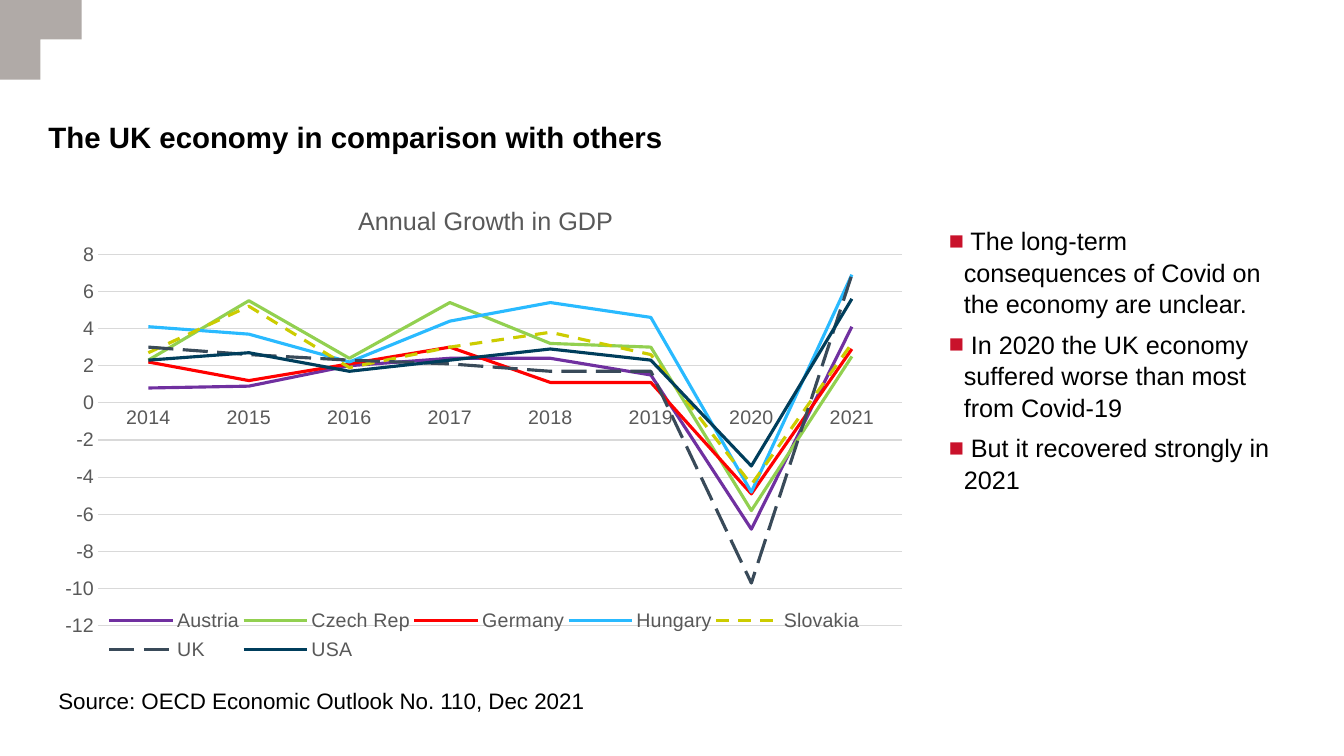
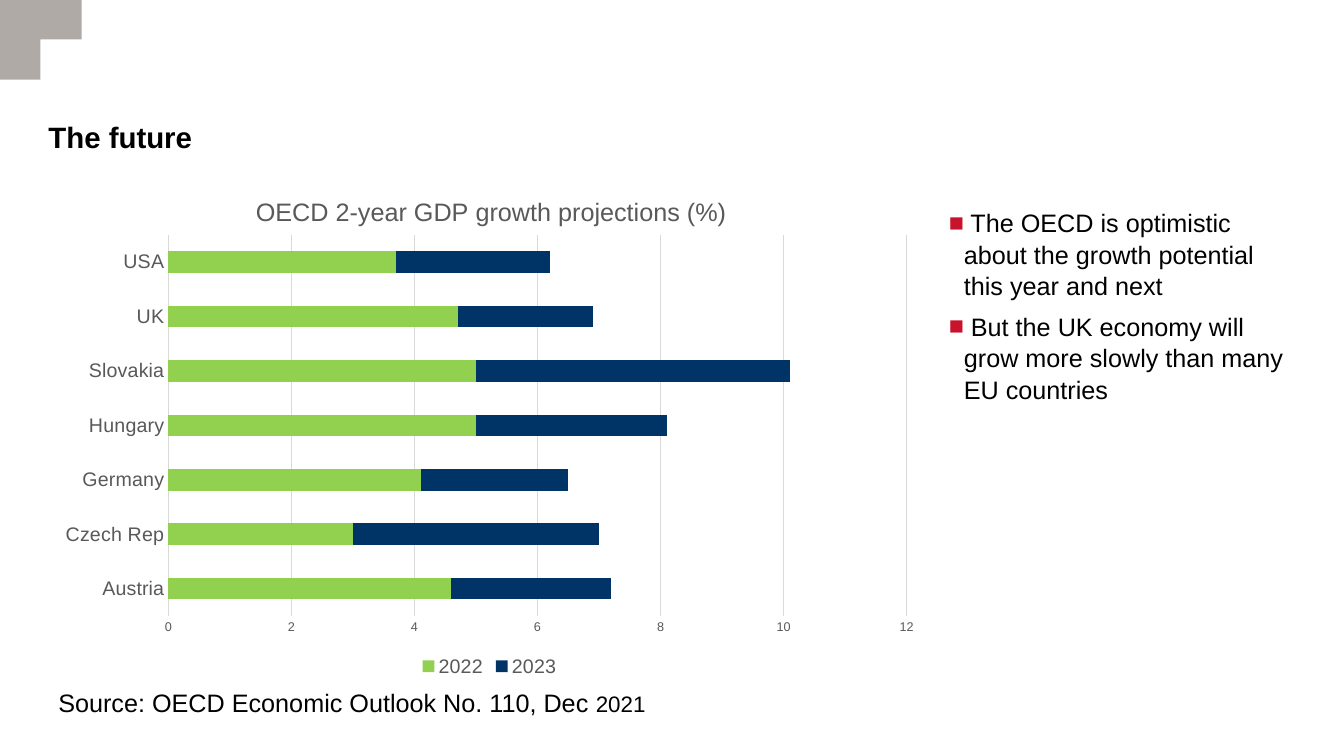
from lxml import etree
from pptx import Presentation
from pptx.chart.data import CategoryChartData
from pptx.dml.color import RGBColor
from pptx.enum import chart as ch, dml, text
from pptx.oxml import parse_xml
from pptx.oxml.ns import nsdecls, qn
from pptx.util import Pt

PX = 9144  # EMU per px, 100 px to the inch
FONT = "Arial"
COLORS = {
    "black": "000000", "band": "B0AAA7", "bullet": "C9122B",
    "label": "595959", "grid": "D9D9D9",
    "purple": "7030A0", "green": "92D050", "red": "FF0000", "sky": "29BAFF",
    "olive": "CCCC00", "slate": "394A59", "teal": "003E5C", "navy": "003366",
}
CORNER = [(0, 0), (81, 0), (81, 39), (40, 39), (40, 79), (0, 79)]
TITLE_BOX = (48, 118, 1237, 86)
SOURCE_BOX = (48, 677, 893, 40)
DASHES = {"dash": dml.MSO_LINE.DASH, "long": dml.MSO_LINE.LONG_DASH}

# Series: name, colour, dash, values. Layouts: fractions of the chart area.
SLIDES = [
    {
        "title": "The UK economy in comparison with others",
        "body_box": (941, 222, 344, 315),
        "points": [
            "The long-term consequences of Covid on the economy are unclear.",
            "In 2020 the UK economy suffered worse than most from Covid-19",
            "But it recovered strongly in 2021",
        ],
        "source": [("Source: OECD Economic Outlook No. 110, Dec 2021", 16)],
        "chart": {
            "kind": ch.XL_CHART_TYPE.LINE,
            "box": (48, 173, 865, 505),
            "title": "Annual Growth in GDP",
            "scale": (-12, 8),
            "value_size": 14,
            "layouts": {"title": (0.35, 0.05),
                        "plotArea": (0.057, 0.157, 0.922, 0.73),
                        "legend": (0.065, 0.84, 0.87, 0.13)},
            "cats": [str(year) for year in range(2014, 2022)],
            "series": [
                ("Austria", "purple", None, (0.8, 0.9, 2, 2.4, 2.4, 1.5, -6.8, 4.1)),
                ("Czech Rep", "green", None, (2.3, 5.5, 2.4, 5.4, 3.2, 3, -5.8, 2.5)),
                ("Germany", "red", None, (2.2, 1.2, 2.1, 3, 1.1, 1.1, -4.9, 2.9)),
                ("Hungary", "sky", None, (4.1, 3.7, 2.2, 4.4, 5.4, 4.6, -4.8, 6.9)),
                ("Slovakia", "olive", "dash", (2.7, 5.2, 1.9, 3, 3.8, 2.6, -4.4, 3.2)),
                ("UK", "slate", "long", (3, 2.6, 2.3, 2.1, 1.7, 1.7, -9.7, 6.9)),
                ("USA", "teal", None, (2.3, 2.7, 1.7, 2.3, 2.9, 2.3, -3.4, 5.6)),
            ],
        },
    },
    {
        "title": "The future",
        "body_box": (941, 204, 344, 266),
        "points": [
            "The OECD is optimistic about the growth potential this year and next",
            "But the UK economy will grow more slowly than many EU countries",
        ],
        "source": [("Source: OECD Economic Outlook No. 110, Dec ", 18), ("2021", 16)],
        "chart": {
            "kind": ch.XL_CHART_TYPE.BAR_STACKED,
            "box": (48, 164, 875, 512),
            "title": "OECD 2-year GDP growth projections (%)",
            "scale": (0, 12),
            "value_size": 9,
            "layouts": {"title": (0.23, 0.05),
                        "plotArea": (0.136, 0.135, 0.837, 0.738)},
            "cats": ["Austria", "Czech Rep", "Germany", "Hungary", "Slovakia", "UK", "USA"],
            "series": [
                ("2022", "green", None, (4.6, 3, 4.1, 5, 5, 4.7, 3.7)),
                ("2023", "navy", None, (2.6, 4, 2.4, 3.1, 5.1, 2.2, 2.5)),
            ],
        },
    },
]


def emu(box):
    return [v * PX for v in box]


def rgb(name):
    return RGBColor.from_string(COLORS[name])


def set_attrs(obj, **values):
    for name, value in values.items():
        setattr(obj, name, value)


def style_font(font, size, color="black", bold=False):
    set_attrs(font, name=FONT, size=Pt(size), bold=bold)
    font.color.rgb = rgb(color)


def style_line(line, color, width):
    line.color.rgb = rgb(color)
    line.width = Pt(width)


def fill_placeholder(sp, box, paragraphs, size, bold=False):
    """Place a placeholder without insets and return its paragraphs."""
    set_attrs(sp, **dict(zip(("left", "top", "width", "height"), emu(box))))
    tf = sp.text_frame
    tf.text = "\n".join(paragraphs)
    set_attrs(tf, margin_left=0, margin_top=0, margin_right=0, margin_bottom=0,
              word_wrap=True, auto_size=text.MSO_AUTO_SIZE.NONE,
              vertical_anchor=text.MSO_ANCHOR.TOP)
    for p in tf.paragraphs:
        set_attrs(p, alignment=text.PP_ALIGN.LEFT, space_before=Pt(0))
        style_font(p.runs[0].font, size, bold=bold)
    return tf.paragraphs


def add_bullet(p):
    set_attrs(p, space_after=Pt(6), line_spacing=1.05)
    pPr = p._p.get_or_add_pPr()
    pPr.set("marL", str(15 * PX))
    pPr.set("indent", str(-15 * PX))
    color = etree.SubElement(pPr, qn("a:buClr"))
    etree.SubElement(color, qn("a:srgbClr")).set("val", COLORS["bullet"])
    etree.SubElement(pPr, qn("a:buFont")).set("typeface", FONT)
    etree.SubElement(pPr, qn("a:buChar")).set("char", "■")


def add_source(slide, runs):
    tf = slide.shapes.add_textbox(*emu(SOURCE_BOX)).text_frame
    tf.word_wrap = True
    for words, size in runs:
        r = tf.paragraphs[0].add_run()
        r.text = words
        style_font(r.font, size)


def set_layout(chart, part, values):
    """Fix the place of a chart's title, legend or inner plot area."""
    el = chart.element.xpath(f"c:chart/c:{part}")[0]
    for old in el.findall(qn("c:layout")):
        el.remove(old)
    inner = part == "plotArea"
    fields = [("layoutTarget", "inner")] if inner else []
    fields += [("xMode", "edge"), ("yMode", "edge")] + list(zip("xywh", values))
    items = "".join(f'<c:{name} val="{value}"/>' for name, value in fields)
    layout = parse_xml(f'<c:layout {nsdecls("c")}><c:manualLayout>{items}'
                       "</c:manualLayout></c:layout>")
    if inner:
        el.insert(0, layout)
    else:
        el.find(qn("c:overlay")).addprevious(layout)


def style_axes(chart, spec_scale, value_size):
    low, high = spec_scale
    cat, val = chart.category_axis, chart.value_axis
    for axis, size in ((cat, 14), (val, value_size)):
        set_attrs(axis, major_tick_mark=ch.XL_TICK_MARK.NONE,
                  minor_tick_mark=ch.XL_TICK_MARK.NONE)
        style_font(axis.tick_labels.font, size, "label")
    cat.has_major_gridlines = False
    style_line(cat.format.line, "grid", 0.75)
    set_attrs(val, minimum_scale=low, maximum_scale=high, major_unit=2,
              has_major_gridlines=True)
    val.format.line.fill.background()
    style_line(val.major_gridlines.format.line, "grid", 0.75)


def add_chart(slide, info):
    data = CategoryChartData()
    data.categories = info["cats"]
    for name, _, _, values in info["series"]:
        data.add_series(name, values)
    chart = slide.shapes.add_chart(info["kind"], *emu(info["box"]), data).chart
    style_font(chart.font, 10)

    chart.has_title = True
    p = chart.chart_title.text_frame.paragraphs[0]
    r = p.add_run()
    r.text = info["title"]
    style_font(r.font, 18, "label")
    chart.chart_title.include_in_layout = False

    chart.has_legend = True
    set_attrs(chart.legend, position=ch.XL_LEGEND_POSITION.BOTTOM,
              include_in_layout=False)
    style_font(chart.legend.font, 14, "label")
    style_axes(chart, info["scale"], info["value_size"])

    plot = chart.plots[0]
    plot.vary_by_categories = False
    is_line = info["kind"] == ch.XL_CHART_TYPE.LINE
    if not is_line:
        set_attrs(plot, gap_width=150, overlap=100)
    for series, (_, color, dash, _) in zip(plot.series, info["series"]):
        if is_line:
            series.smooth = False
            style_line(series.format.line, color, 2.25)
            if dash:
                series.format.line.dash_style = DASHES[dash]
        else:
            series.format.fill.solid()
            series.format.fill.fore_color.rgb = rgb(color)
    for part, values in info["layouts"].items():
        set_layout(chart, part, values)


def add_corner(prs, slide):
    """Draw the corner band and move it to the master, so all slides show it."""
    builder = slide.shapes.build_freeform(*CORNER[0], scale=PX)
    builder.add_line_segments(CORNER[1:], close=True)
    sp = builder.convert_to_shape()
    sp.shadow.inherit = False
    sp.fill.solid()
    sp.fill.fore_color.rgb = rgb("band")
    sp.line.fill.background()
    sp.element.nvSpPr.cNvPr.id = 20
    prs.slide_master.element.cSld.spTree.append(sp.element)


def add_slide(prs, info):
    slide = prs.slides.add_slide(prs.slide_layouts[1])
    title, body = slide.placeholders
    fill_placeholder(title, TITLE_BOX, [info["title"]], 21, bold=True)
    points = [f" {point}" for point in info["points"]]
    for p in fill_placeholder(body, info["body_box"], points, 18):
        add_bullet(p)
    add_chart(slide, info["chart"])
    add_source(slide, info["source"])
    return slide


def main():
    prs = Presentation()
    prs.slide_width, prs.slide_height = emu((1333, 750))
    slides = [add_slide(prs, info) for info in SLIDES]
    add_corner(prs, slides[0])
    prs.save("out.pptx")


if __name__ == "__main__":
    main()
